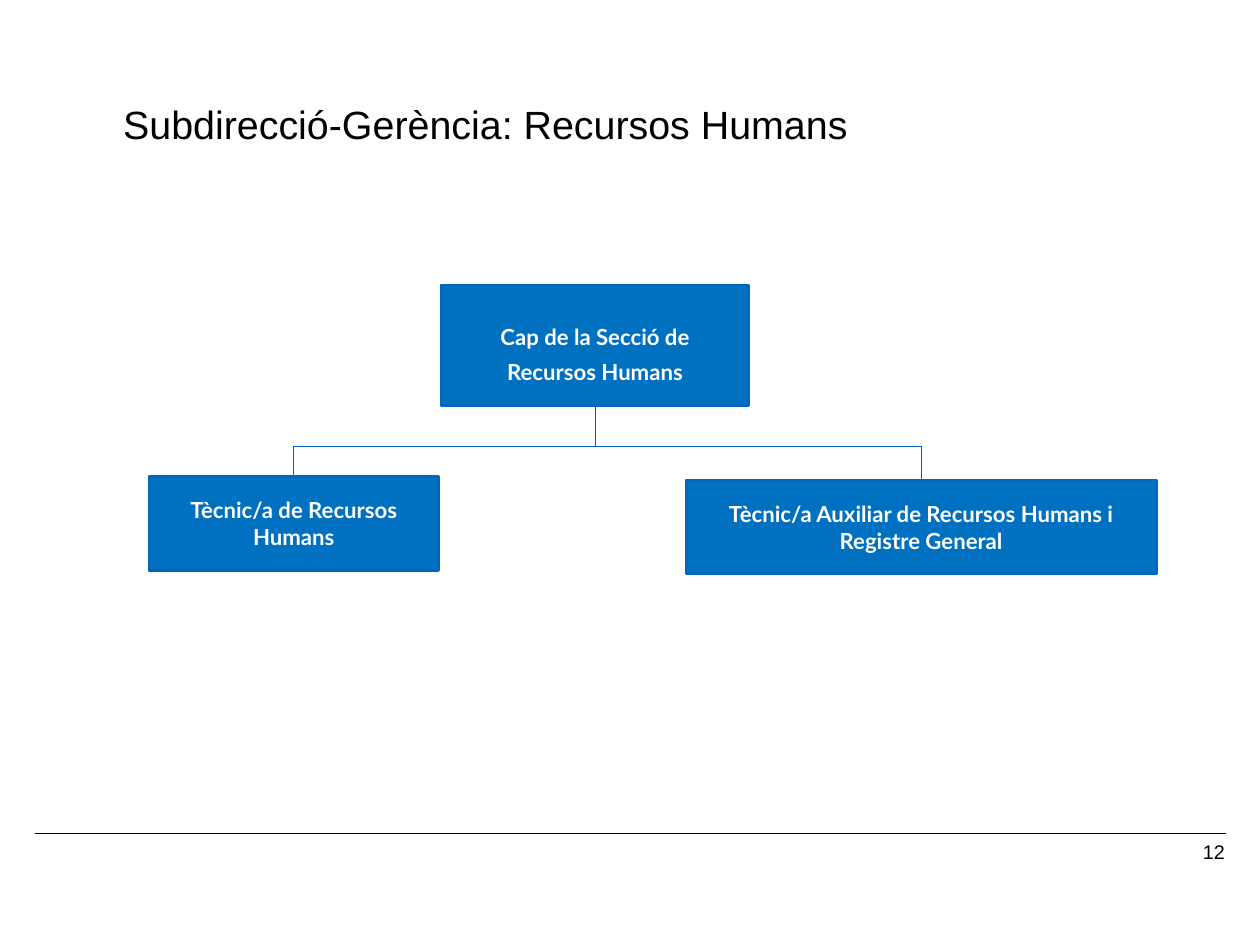
from lxml import etree
from pptx import Presentation
from pptx import util as u
from pptx.dml.color import RGBColor
from pptx.enum import shapes, text
from pptx.oxml.ns import qn

TITLE = "Subdirecció-Gerència: Recursos Humans"
PAGE_NUMBER = "12"
# lines, (left, top, width, height), top inset
HEAD = (["Cap de la Secció de", "Recursos Humans"], (4.98, 3.22, 3.47, 1.36), 0.24)
STAFF = [
    (["Tècnic/a de Recursos Humans"], (1.68, 5.38, 3.27, 1.06), 0.04),
    (["Tècnic/a Auxiliar de Recursos Humans i Registre General"],
     (7.74, 5.42, 5.31, 1.06), 0.04),
]
BUS_TOP = 5.04
BOX_FILL, BOX_LINE, LINK, BLACK, WHITE = "0070C0", "0365C0", "0063BF", "000000", "FFFFFF"


def color(value):
    return RGBColor.from_string(value)


def write(shape, lines, size, font="Arial", ink=BLACK, bold=False,
          align=text.PP_ALIGN.LEFT, anchor=text.MSO_ANCHOR.TOP,
          insets=(0.1, 0.05, 0.1, 0.05), gap=0, spacing=None):
    """Fill a shape with paragraphs; insets run left, top, right, bottom."""
    frame = shape.text_frame
    frame.word_wrap = True
    frame.auto_size = text.MSO_AUTO_SIZE.NONE
    frame.vertical_anchor = anchor
    (frame.margin_left, frame.margin_top,
     frame.margin_right, frame.margin_bottom) = map(u.Inches, insets)
    for index, line in enumerate(lines):
        paragraph = frame.add_paragraph() if index else frame.paragraphs[0]
        paragraph.alignment = align
        paragraph.space_before = u.Pt(gap if index else 0)
        paragraph.space_after = u.Pt(gap)
        if spacing:
            paragraph.line_spacing = spacing
        run = paragraph.add_run()
        run.text = line
        run.font.name, run.font.size, run.font.bold = font, u.Pt(size), bold
        run.font.color.rgb = color(ink)


def add_box(slide, lines, place, top_inset):
    box = slide.shapes.add_shape(shapes.MSO_SHAPE.RECTANGLE, *map(u.Inches, place))
    box.shadow.inherit = False
    box.fill.solid()
    box.fill.fore_color.rgb = color(BOX_FILL)
    box.line.color.rgb = color(BOX_LINE)
    box.line.width = u.Pt(2)
    write(box, lines, 18, font="Lato", ink=WHITE, bold=True,
          align=text.PP_ALIGN.CENTER, anchor=text.MSO_ANCHOR.MIDDLE,
          insets=(0.04, top_inset, 0.04, 0.04), gap=3.2)
    return box


def add_line(slide, x1, y1, x2, y2, ink=LINK, width=0.75):
    line = slide.shapes.add_connector(shapes.MSO_CONNECTOR.STRAIGHT, x1, y1, x2, y2)
    line.line.color.rgb = color(ink)
    line.line.width = u.Pt(width)
    etree.SubElement(line.element.spPr, qn("a:effectLst"))
    return line


def center_x(shape):
    return shape.left + shape.width // 2


def main():
    presentation = Presentation()
    presentation.slide_width = u.Inches(14.22)
    presentation.slide_height = u.Inches(10.67)
    slide = presentation.slides.add_slide(presentation.slide_layouts[5])

    title = slide.shapes.title
    title.left, title.top, title.width, title.height = map(
        u.Inches, (1.32, 1.16, 9.06, 0.57))
    write(title, [TITLE], 32, insets=(0.07,) * 4, spacing=0.8)

    head = add_box(slide, *HEAD)
    staff = [add_box(slide, *entry) for entry in STAFF]

    bus_y = u.Inches(BUS_TOP)
    add_line(slide, center_x(staff[0]), bus_y, center_x(staff[-1]), bus_y)
    stem = add_line(slide, center_x(head), head.top + head.height, center_x(head), bus_y)
    stem.begin_connect(head, 2)
    for box in staff:
        drop = add_line(slide, center_x(box), bus_y, center_x(box), box.top)
        drop.end_connect(box, 0)

    footer_y = u.Inches(9.41)
    add_line(slide, u.Inches(0.39), footer_y, u.Inches(13.84), footer_y,
             ink=BLACK, width=1)
    number = slide.shapes.add_textbox(*map(u.Inches, (10.6, 9.43, 3.32, 0.41)))
    write(number, [PAGE_NUMBER], 16, align=text.PP_ALIGN.RIGHT)

    presentation.save("out.pptx")


if __name__ == "__main__":
    main()
